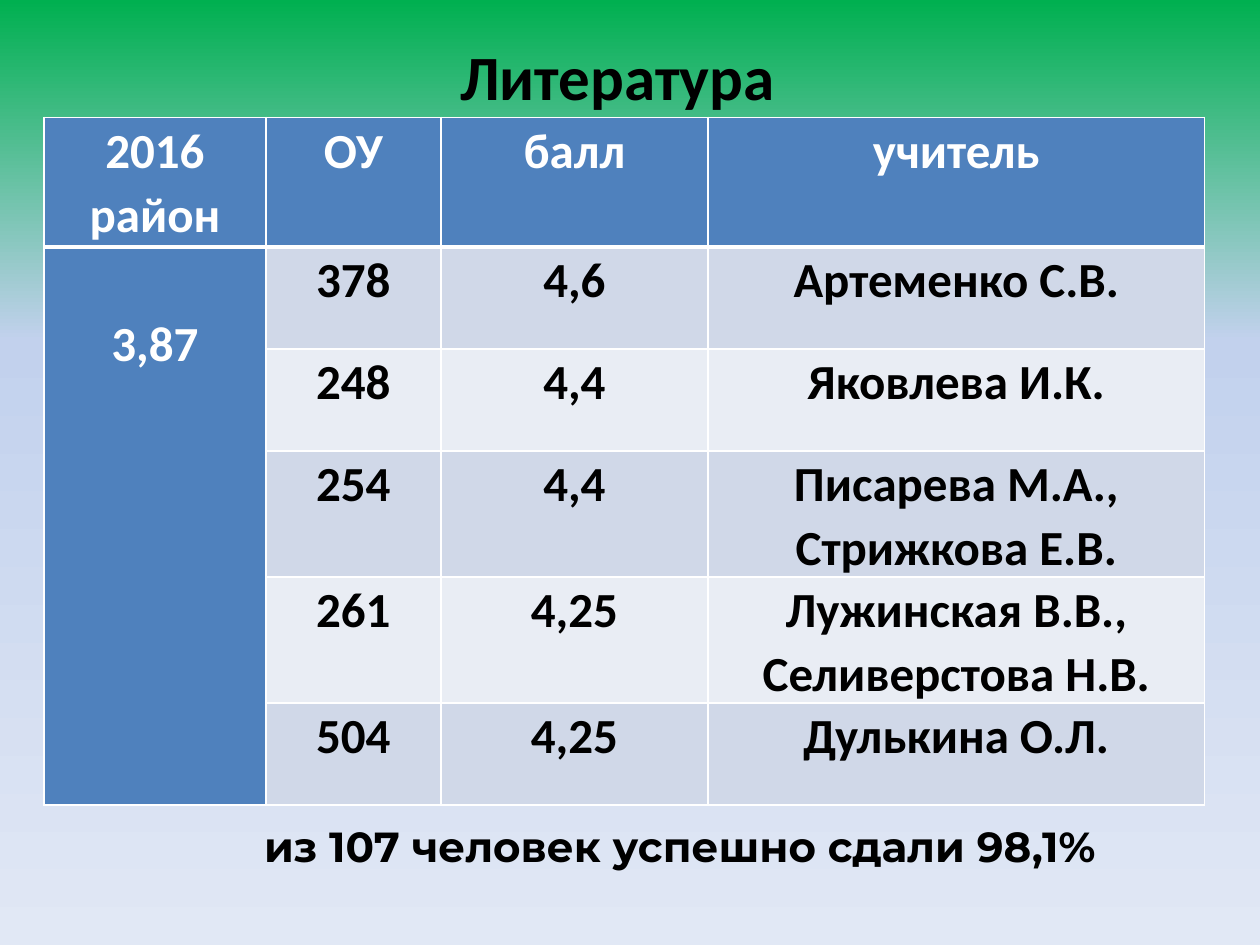
from copy import deepcopy

from lxml import etree
from pptx import Presentation
from pptx.dml.color import RGBColor
from pptx.enum.text import MSO_ANCHOR, MSO_AUTO_SIZE, PP_ALIGN
from pptx.oxml.ns import qn
from pptx.util import Pt

CENTER, TOP, FIT = PP_ALIGN.CENTER, MSO_ANCHOR.TOP, MSO_AUTO_SIZE.SHAPE_TO_FIT_TEXT
TITLE_ONLY = 5

BLACK = RGBColor(0, 0, 0)
WHITE = RGBColor(255, 255, 255)
BLUE = RGBColor(0x4F, 0x81, 0xBD)
BANDS = RGBColor(0xD0, 0xD8, 0xE8), RGBColor(0xE9, 0xED, 0xF4)
BACKGROUND = [
    (0, RGBColor(0x00, 0xB0, 0x50)),
    (0.36, RGBColor(0xC2, 0xD1, 0xED)),
    (1, RGBColor(0xE1, 0xE8, 0xF5)),
]

TITLE = dict(name="Calibri", size=Pt(36), bold=True)
BODY = dict(name="Calibri", size=Pt(28), bold=True)
CAPTION = dict(name="Montserrat", size=Pt(24), bold=True)

COLUMNS = [126.7, 100.1, 152.6, 283.7]
ROWS = [74.2, 58.3, 58.3, 67.7, 67.7, 58.3]
SCORES = [
    ["2016 район", "ОУ", "балл", "учитель"],
    ["3,87", "378", "4,6", "Артеменко С.В."],
    ["", "248", "4,4", "Яковлева И.К."],
    ["", "254", "4,4", "Писарева М.А., Стрижкова Е.В."],
    ["", "261", "4,25", "Лужинская В.В., Селиверстова Н.В."],
    ["", "504", "4,25", "Дулькина О.Л."],
]


class Deck:
    def __init__(self, prs):
        self.s = prs.slides.add_slide(prs.slide_layouts[TITLE_ONLY])

    def background(self, stops):
        fill = self.s.background.fill
        fill.gradient()
        fill.gradient_angle = 270
        gs_list = next(self.s.element.iter(qn("a:gsLst")))
        gs_list.append(deepcopy(gs_list[0]))
        for stop, (position, color) in zip(fill.gradient_stops, stops):
            stop.position, stop.color.rgb = position, color

    def add_text(self, tf, text, style, color=BLACK, after=0):
        p = tf.paragraphs[0]
        p.alignment, p.line_spacing, p.space_after = CENTER, 1.07, Pt(after)
        r = p.add_run()
        r.text = text
        for key, value in style.items():
            setattr(r.font, key, value)
        r.font.color.rgb = color

    def frame(self, sp, text, style, wrap):
        tf = sp.text_frame
        tf.word_wrap, tf.auto_size, tf.vertical_anchor = wrap, FIT, TOP
        self.add_text(tf, text, style, after=8)

    def title(self, text, left, top, width, height):
        sp = self.s.shapes.title
        sp.left, sp.top, sp.width, sp.height = map(Pt, (left, top, width, height))
        self.frame(sp, text, TITLE, wrap=False)

    def caption(self, text, *box):
        sp = self.s.shapes.add_textbox(*map(Pt, box))
        self.frame(sp, text, CAPTION, wrap=True)

    def borders(self, cell, **widths):
        tcPr = cell._tc.get_or_add_tcPr()
        for side in "LRTB":
            ln = etree.SubElement(tcPr, qn("a:ln" + side), w=str(Pt(widths.get(side, 1))))
            fill = etree.SubElement(ln, qn("a:solidFill"))
            etree.SubElement(fill, qn("a:srgbClr"), val=str(WHITE))

    def table(self, data, left, top, columns, rows):
        box = map(Pt, (left, top, sum(columns), sum(rows)))
        table = self.s.shapes.add_table(len(rows), len(columns), *box).table
        table.horz_banding = False
        for column, width in zip(table.columns, columns):
            column.width = Pt(width)
        for row, height in zip(table.rows, rows):
            row.height = Pt(height)
        for i, texts in enumerate(data):
            for j, text in enumerate(texts):
                cell = table.cell(i, j)
                heading = i == 0 or j == 0
                cell.margin_left = cell.margin_right = Pt(5)
                cell.margin_top = cell.margin_bottom = 0
                # The header row is ruled off by a thick line
                self.borders(cell, **{0: {"B": 3}, 1: {"T": 3}}.get(i, {}))
                cell.fill.solid()
                cell.fill.fore_color.rgb = BLUE if heading else BANDS[(i - 1) % 2]
                if text:
                    self.add_text(cell.text_frame, text, BODY, WHITE if heading else BLACK)
        # The district average spans all schools, one line down
        average = table.cell(1, 0)
        average.merge(table.cell(len(rows) - 1, 0))
        average.margin_top = Pt(36.6)


def main():
    prs = Presentation()
    prs.slide_width, prs.slide_height = Pt(720), Pt(540)
    deck = Deck(prs)
    deck.background(BACKGROUND)
    deck.title("Литература", 250.6, 15.1, 204.5, 51.8)
    deck.table(SCORES, 25.2, 67, COLUMNS, ROWS)
    deck.caption("из 107 человек успешно сдали 98,1%", 87.8, 463, 601.2, 36.7)
    prs.save("out.pptx")


if __name__ == "__main__":
    main()
